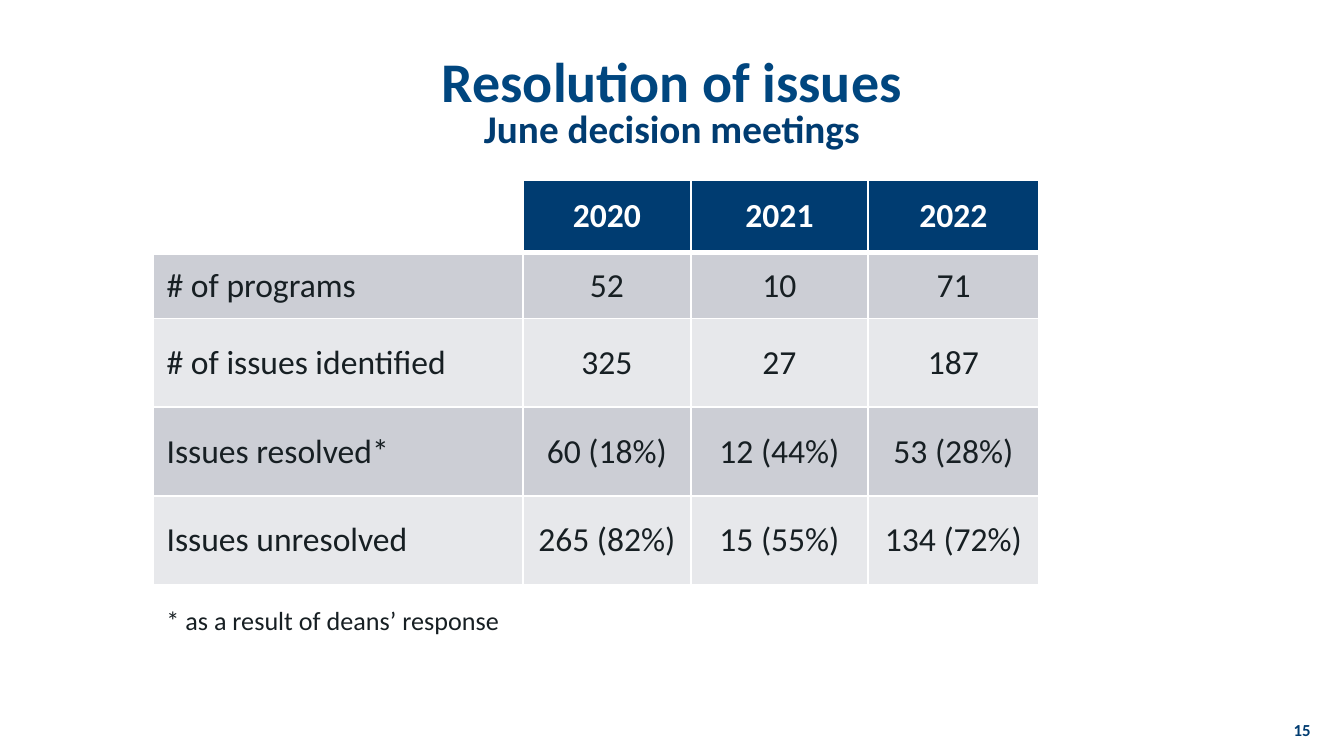
import pptx
import pptx.dml.color
import pptx.enum.text
import pptx.oxml
import pptx.oxml.ns
import pptx.util
from dataclasses import dataclass
from pptx.util import Inches

ALIGN = pptx.enum.text.PP_ALIGN
ANCHOR = pptx.enum.text.MSO_ANCHOR


@dataclass(frozen=True)
class Theme:
    font: str = "Calibri"
    title: str = "00467F"
    navy: str = "003C71"
    ink: str = "171F23"
    white: str = "FFFFFF"
    bands: tuple = ("CCCED5", "E7E8EB")
    title_size: int = 30
    subtitle_size: int = 21
    table_size: int = 18
    note_size: int = 14
    number_size: int = 9


THEME = Theme()

COLUMN_WIDTHS = (2.75, 1.25, 1.32, 1.27)
ROW_HEIGHTS = (0.54, 0.49, 0.66, 0.66, 0.66)
ROWS = (
    ("", "2020", "2021", "2022"),
    ("# of programs", "52", "10", "71"),
    ("# of issues identified", "325", "27", "187"),
    ("Issues resolved*", "60 (18%)", "12 (44%)", "53 (28%)"),
    ("Issues unresolved", "265 (82%)", "15 (55%)", "134 (72%)"),
)


def rgb(color):
    return pptx.dml.color.RGBColor.from_string(color)


def write(paragraph, text, size, color, bold=False, align=ALIGN.LEFT):
    paragraph.alignment = align
    run = paragraph.add_run()
    run.text = text
    run.font.name = THEME.font
    run.font.size = pptx.util.Pt(size)
    run.font.bold = bold
    run.font.color.rgb = rgb(color)


def add_title(slide, title, subtitle):
    shape = slide.shapes.title
    shape.left, shape.top = Inches(0.75), Inches(0.38)
    shape.width, shape.height = Inches(8.5), Inches(0.81)
    frame = shape.text_frame
    frame.auto_size = pptx.enum.text.MSO_AUTO_SIZE.NONE
    frame.vertical_anchor = ANCHOR.MIDDLE
    lines = (
        (frame.paragraphs[0], title, THEME.title_size, THEME.title),
        (frame.add_paragraph(), subtitle, THEME.subtitle_size, THEME.navy),
    )
    for paragraph, text, size, color in lines:
        paragraph.line_spacing = 0.8
        paragraph.space_before = pptx.util.Pt(0)
        write(paragraph, text, size, color, True, ALIGN.CENTER)


def add_text(slide, box, text, size, color, bold=False, align=ALIGN.LEFT,
             anchor=ANCHOR.TOP):
    shape = slide.shapes.add_textbox(*(Inches(length) for length in box))
    frame = shape.text_frame
    frame.word_wrap = True
    frame.vertical_anchor = anchor
    write(frame.paragraphs[0], text, size, color, bold, align)


def set_borders(cell, top, bottom):
    properties = cell._tc.get_or_add_tcPr()
    for side, points in (("L", 1), ("R", 1), ("T", top), ("B", bottom)):
        properties.append(pptx.oxml.parse_xml(
            f'<a:ln{side} {pptx.oxml.ns.nsdecls("a")} w="{pptx.util.Pt(points)}">'
            f'<a:solidFill><a:srgbClr val="{THEME.white}"/></a:solidFill>'
            f'</a:ln{side}>'))


def fill_cell(cell, text, row, column):
    header = row == 0
    # The header is set off by a thicker rule
    set_borders(cell, 3 if row == 1 else 1, 3 if header else 1)
    cell.vertical_anchor = ANCHOR.MIDDLE
    if not text:
        cell.fill.background()
        return
    cell.fill.solid()
    cell.fill.fore_color.rgb = rgb(
        THEME.navy if header else THEME.bands[(row - 1) % 2])
    write(cell.text_frame.paragraphs[0], text, THEME.table_size,
          THEME.white if header else THEME.ink, header,
          ALIGN.CENTER if column else ALIGN.LEFT)


def add_issue_table(slide):
    table = slide.shapes.add_table(
        len(ROWS), len(COLUMN_WIDTHS), Inches(1.14), Inches(1.34),
        Inches(sum(COLUMN_WIDTHS)), Inches(sum(ROW_HEIGHTS))).table
    for column, width in zip(table.columns, COLUMN_WIDTHS):
        column.width = Inches(width)
    for row, height in zip(table.rows, ROW_HEIGHTS):
        row.height = Inches(height)
    for row, texts in enumerate(ROWS):
        for column, text in enumerate(texts):
            fill_cell(table.cell(row, column), text, row, column)


def main():
    presentation = pptx.Presentation()
    # Widescreen, 16:9
    presentation.slide_width = Inches(10)
    presentation.slide_height = Inches(10 * 9 / 16)
    slide = presentation.slides.add_slide(presentation.slide_layouts[5])

    # Heading
    add_title(slide, "Resolution of issues", "June decision meetings")

    # Table and its footnote
    add_issue_table(slide)
    add_text(slide, (1.14, 4.45, 7.06, 0.34), "* as a result of deans’ response",
             THEME.note_size, THEME.ink)

    # Slide number
    add_text(slide, (9.49, 5.35, 0.36, 0.16), "15", THEME.number_size,
             THEME.navy, True, ALIGN.RIGHT, ANCHOR.MIDDLE)

    presentation.save("out.pptx")


if __name__ == "__main__":
    main()
